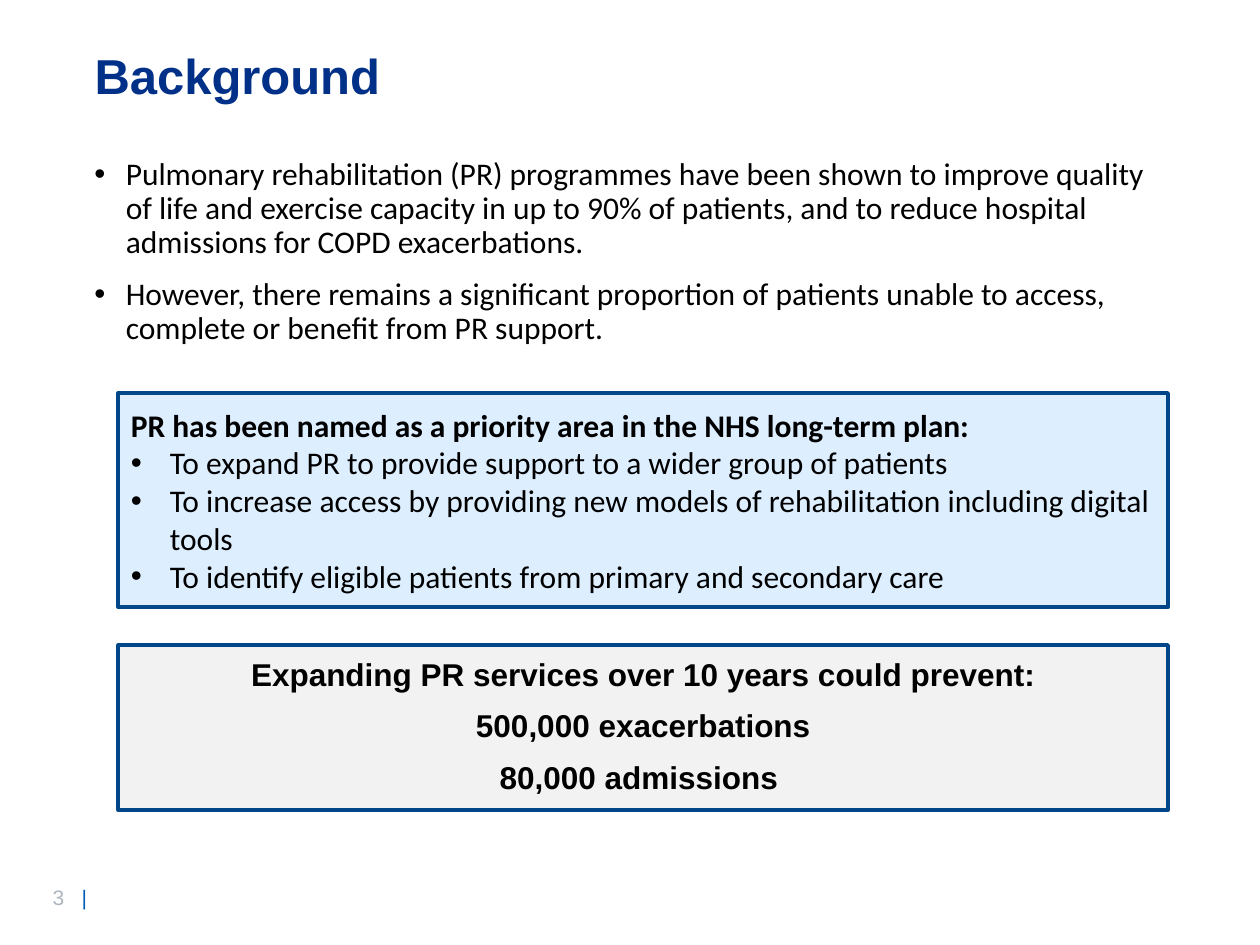
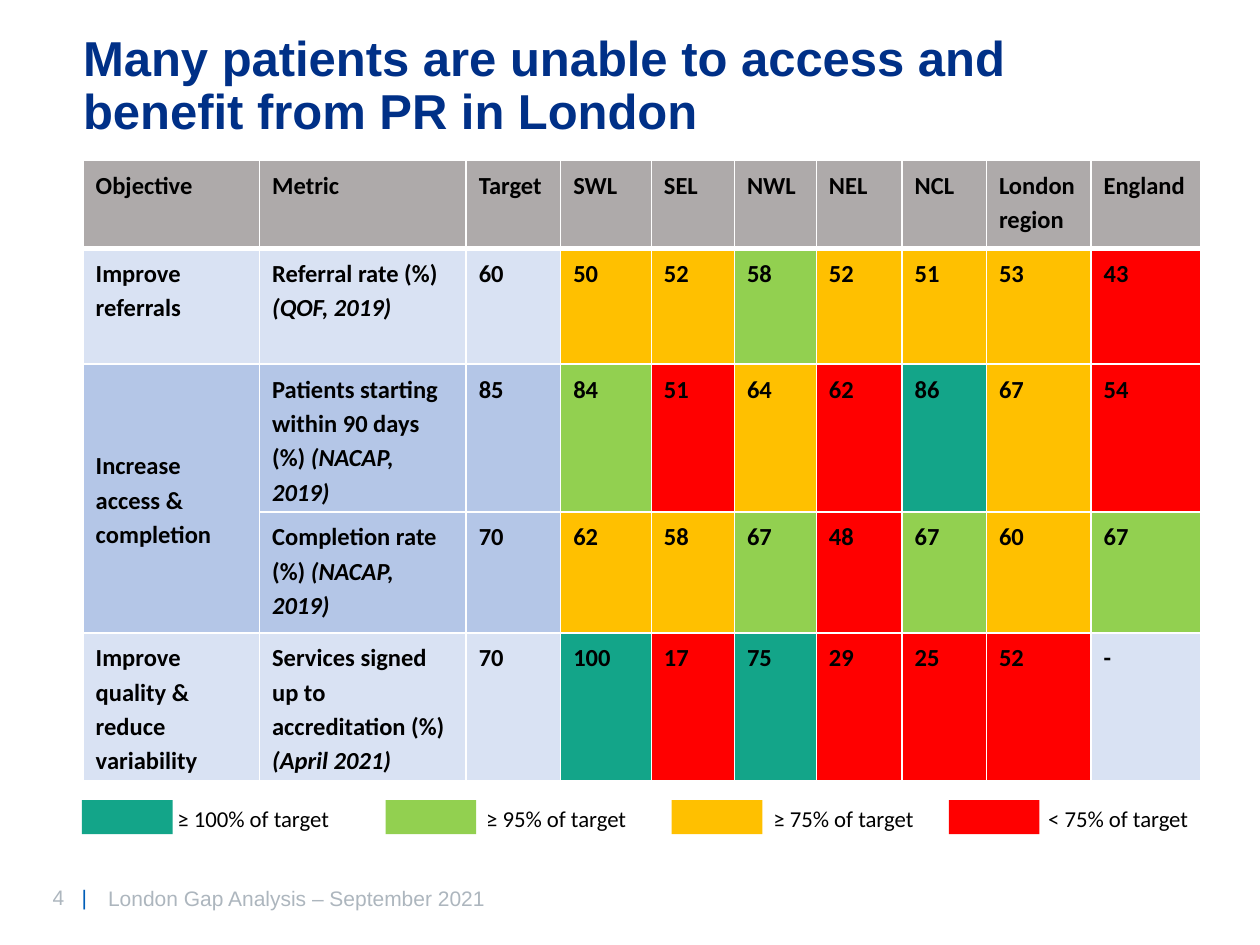
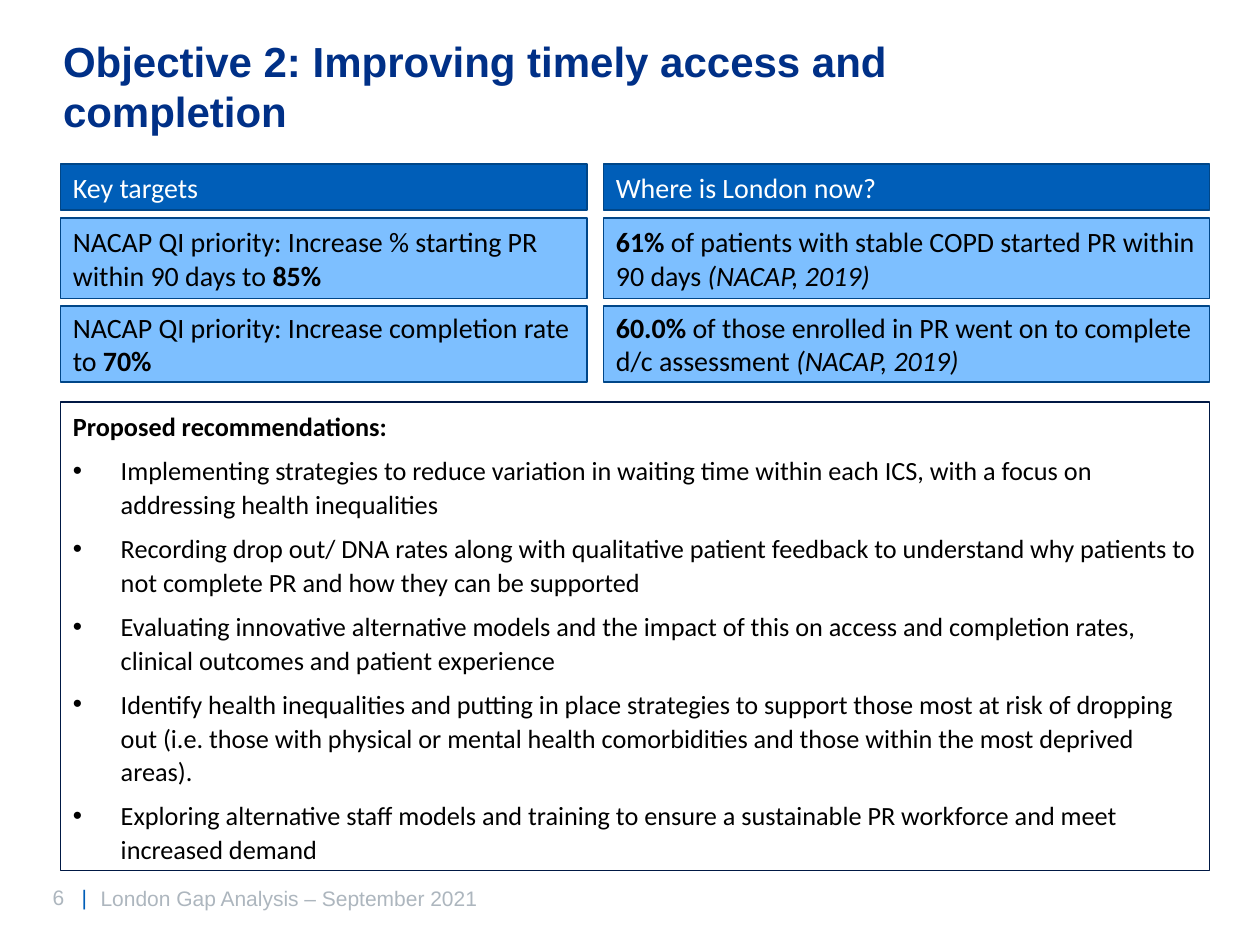
from dataclasses import dataclass

from lxml import etree
from pptx import Presentation
from pptx.dml.color import RGBColor
from pptx.enum.shapes import MSO_SHAPE
from pptx.enum.text import MSO_ANCHOR, MSO_AUTO_SIZE, PP_ALIGN
from pptx.oxml.ns import qn
from pptx.util import Inches, Pt

RECTANGLE = MSO_SHAPE.RECTANGLE
TOP, MIDDLE = MSO_ANCHOR.TOP, MSO_ANCHOR.MIDDLE
LEFT, CENTER = PP_ALIGN.LEFT, PP_ALIGN.CENTER
NO_AUTOFIT = MSO_AUTO_SIZE.NONE


@dataclass(frozen=True)
class Theme:
    heading_font: str = "Arial"
    body_font: str = "Calibri"
    navy: str = "003087"
    blue: str = "005EB8"
    edge: str = "004688"
    dark_edge: str = "001844"
    sky: str = "7DBFFF"
    pale_blue: str = "DDEEFF"
    pale_grey: str = "F2F2F2"
    footer_grey: str = "ADB6BE"
    header_grey: str = "AEAAAA"
    band_light: str = "D9E2F3"
    band_dark: str = "B4C6E7"
    teal: str = "13A589"
    green: str = "92D050"
    amber: str = "FFC000"
    red: str = "FF0000"
    black: str = "000000"
    white: str = "FFFFFF"
    title: float = 28
    long_title: float = 24
    body: float = 18
    card: float = 16
    recommendation: float = 15
    table: float = 14
    legend: float = 13
    footer: float = 12


THEME = Theme()


def write(frame, paragraphs, size, font=THEME.body_font, colour=THEME.black,
          align=LEFT, spacing=1.0, before=0, indent=0, anchor=TOP):
    """Each paragraph is a list of (text, style); style holds b, i or a bullet."""
    frame.word_wrap = True
    frame.vertical_anchor = anchor
    for index, runs in enumerate(paragraphs):
        paragraph = frame.add_paragraph() if index else frame.paragraphs[0]
        paragraph.alignment = align
        paragraph.line_spacing = spacing
        if index:
            paragraph.space_before = Pt(before)
        if "•" in runs[0][1]:
            properties = paragraph._p.get_or_add_pPr()
            properties.set("marL", str(Inches(indent)))
            properties.set("indent", str(-Inches(indent)))
            etree.SubElement(properties, qn("a:buFont"), typeface="Arial")
            etree.SubElement(properties, qn("a:buChar"), char="•")
        for text, style in runs:
            run = paragraph.add_run()
            run.text = text
            run.font.name = font
            run.font.size = Pt(size)
            run.font.bold = "b" in style
            run.font.italic = "i" in style
            run.font.color.rgb = RGBColor.from_string(colour)


def add_box(slide, place, fill, edge=None, edge_width=1.0):
    box = slide.shapes.add_shape(RECTANGLE, *map(Inches, place))
    box.shadow.inherit = False
    box.fill.solid()
    box.fill.fore_color.rgb = RGBColor.from_string(fill)
    if edge:
        box.line.color.rgb = RGBColor.from_string(edge)
        box.line.width = Pt(edge_width)
    else:
        box.line.fill.background()
    return box


deck = Presentation()
deck.slide_width, deck.slide_height = Inches(10), Inches(7.5)
title_only = deck.slide_layouts[5]

# Titles, page numbers and footers
FOOTER = "London Gap Analysis – September 2021"
OPENINGS = [
    (3, "Background", (0.65, 0.36, 7.75, 0.67), THEME.title, 0.9, None),
    (4, "Many patients are unable to access and benefit from PR in London",
     (0.56, 0.22, 7.6, 0.95), THEME.title, 0.9, 0.76),
    (6, "Objective 2: Improving timely access and completion",
     (0.4, 0.23, 8.09, 0.91), THEME.long_title, 1.0, 0.7),
]
slides = []
for number, heading, place, size, spacing, footer_left in OPENINGS:
    slide = deck.slides.add_slide(title_only)
    slides.append(slide)
    title = slide.shapes.title
    title.left, title.top, title.width, title.height = map(Inches, place)
    title.text_frame.auto_size = NO_AUTOFIT
    write(title.text_frame, [[(heading, "b")]], size, THEME.heading_font,
          THEME.navy, spacing=spacing)

    page = slide.shapes.add_textbox(*map(Inches, (0.32, 6.97, 0.71, 0.3)))
    write(page.text_frame, [[(str(number), ""), ("\t|", "")]], THEME.footer,
          THEME.heading_font, THEME.footer_grey)
    page_line = page.text_frame.paragraphs[0]
    page_line.runs[1].font.color.rgb = RGBColor.from_string(THEME.blue)
    tabs = etree.SubElement(page_line._p.get_or_add_pPr(), qn("a:tabLst"))
    etree.SubElement(tabs, qn("a:tab"), pos=str(Inches(0.23)), algn="l")

    if footer_left:
        footer = slide.shapes.add_textbox(
            *map(Inches, (footer_left, 6.93, 6.26, 0.4)))
        write(footer.text_frame, [[(FOOTER, "")]], THEME.footer,
              THEME.heading_font, THEME.footer_grey, anchor=MIDDLE)

background, gaps, objective = slides

# Background: evidence, priorities and potential benefit
evidence = add_box(background, (0.65, 1.21, 8.76, 1.7), THEME.white)
write(evidence.text_frame, [
    [("Pulmonary rehabilitation (PR) programmes have been shown to improve quality of life and "
      "exercise capacity in up to 90% of patients, and to reduce hospital admissions for COPD "
      "exacerbations.", "•")],
    [("However, there remains a significant proportion of patients unable to access, complete "
      "or benefit from PR support.", "•")],
], THEME.body, spacing=0.9, before=10, indent=0.25)

priorities = add_box(background, (0.94, 3.12, 8.33, 1.7), THEME.pale_blue, THEME.edge, 2.25)
write(priorities.text_frame, [
    [("PR has been named as a priority area in the NHS long-term plan:", "b")],
    [("To expand PR to provide support to a wider group of patients", "•")],
    [("To increase access by providing new models of rehabilitation including digital tools",
      "•")],
    [("To identify eligible patients from primary and secondary care", "•")],
], THEME.body, indent=0.31, anchor=MIDDLE)

benefit = add_box(background, (0.94, 5.12, 8.33, 1.31), THEME.pale_grey, THEME.edge, 2.25)
write(benefit.text_frame, [
    [("Expanding PR services over 10 years could prevent:", "b")],
    [("500,000 exacerbations", "b")],
    [("80,000 admissions ", "b")],
], THEME.body, THEME.heading_font, align=CENTER, spacing=0.9, before=10, anchor=MIDDLE)

# Gap table: scores are coloured by their share of the target
HEADERS = ["Objective", "Metric", "Target", "SWL", "SEL", "NWL", "NEL", "NCL",
           "London region", "England"]
METRICS = [
    ("Improve referrals", "Referral rate (%) ", "(QOF, 2019)",
     60, [50, 52, 58, 52, 51, 53, 43], THEME.band_light),
    ("Increase access & completion", "Patients starting within 90 days (%) ", "(NACAP, 2019)",
     85, [84, 51, 64, 62, 86, 67, 54], THEME.band_dark),
    ("", "Completion rate (%) ", "(NACAP, 2019)",
     70, [62, 58, 67, 48, 67, 60, 67], THEME.band_dark),
    ("Improve quality & reduce variability", "Services signed up to accreditation (%) ",
     "(April 2021)", 70, [100, 17, 75, 29, 25, 52, "-"], THEME.band_light),
]
COLUMN_WIDTHS = [1.4, 1.64, 0.75, 0.72, 0.66, 0.65, 0.68, 0.67, 0.83, 0.87]
ROW_HEIGHTS = [0.7, 0.92, 1.17, 0.96, 1.17]
RATINGS = [(1.0, THEME.teal, "≥ 100% of target"), (0.95, THEME.green, "≥ 95% of target"),
           (0.75, THEME.amber, "≥ 75% of target"), (0, THEME.red, "< 75% of target")]

rows = [[([(header, "b")], THEME.header_grey) for header in HEADERS]]
for aim, metric, source, target, scores, band in METRICS:
    row = [([(aim, "b")] if aim else None, band),
           ([(metric, "b"), (source, "bi")], band),
           ([(str(target), "b")], band)]
    for score in scores:
        shade = band if score == "-" else next(
            colour for share, colour, label in RATINGS if score / target >= share)
        row.append(([(str(score), "b")], shade))
    rows.append(row)

table = gaps.shapes.add_table(
    len(rows), len(HEADERS), Inches(0.66), Inches(1.27),
    Inches(sum(COLUMN_WIDTHS)), Inches(sum(ROW_HEIGHTS))).table
for column, width in zip(table.columns, COLUMN_WIDTHS):
    column.width = Inches(width)
for table_row, height in zip(table.rows, ROW_HEIGHTS):
    table_row.height = Inches(height)
table.cell(2, 0).merge(table.cell(3, 0))

for r, row in enumerate(rows):
    for c, (runs, shade) in enumerate(row):
        cell = table.cell(r, c)
        cell.fill.solid()
        cell.fill.fore_color.rgb = RGBColor.from_string(shade)
        if runs:
            write(cell.text_frame, [runs], THEME.table, spacing=1.15)
        properties = cell._tc.get_or_add_tcPr()
        for position, side in enumerate(["lnL", "lnR", "lnT", "lnB"]):
            heavy = (r, side) in [(0, "lnB"), (1, "lnT")]
            border = etree.Element(qn(f"a:{side}"), w=str(Pt(3 if heavy else 1)))
            paint = etree.SubElement(border, qn("a:solidFill"))
            etree.SubElement(paint, qn("a:srgbClr"), val=THEME.white)
            properties.insert(position, border)
table.cell(2, 0).vertical_anchor = MIDDLE

# Legend
LEGEND_LEFTS = [(0.65, 1.31), (3.06, 3.76), (5.33, 6.04), (7.53, 8.22)]
for (swatch_left, label_left), (share, colour, label) in zip(LEGEND_LEFTS, RATINGS):
    add_box(gaps, (swatch_left, 6.35, 0.72, 0.27), colour)
    caption = gaps.shapes.add_textbox(*map(Inches, (label_left, 6.34, 1.51, 0.32)))
    write(caption.text_frame, [[(label, "")]], THEME.legend)

# Objective 2: targets beside the current position
CARD_COLUMNS = [
    (0.48, 4.18, [
        [("Key targets", "")],
        [("NACAP QI priority: Increase % starting PR within 90 days to ", ""), ("85%", "b")],
        [("NACAP QI priority: Increase completion rate to ", ""), ("70%", "b")],
    ]),
    (4.79, 4.81, [
        [("Where is London now?", "")],
        [("61% ", "b"), ("of patients with stable COPD started PR within 90 days ", ""),
         ("(NACAP, 2019)", "i")],
        [("60.0% ", "b"), ("of those enrolled in PR went on to complete d/c assessment ", ""),
         ("(NACAP, 2019)", "i")],
    ]),
]
CARD_ROWS = [(1.3, 0.37, THEME.blue, THEME.white), (1.73, 0.64, THEME.sky, THEME.black),
             (2.43, 0.6, THEME.sky, THEME.black)]
for left, width, cards in CARD_COLUMNS:
    for runs, (top, height, fill, ink) in zip(cards, CARD_ROWS):
        card = add_box(objective, (left, top, width, height), fill, THEME.edge)
        write(card.text_frame, [runs], THEME.card, colour=ink, anchor=MIDDLE)

# Recommendations
RECOMMENDATIONS = [
    "Implementing strategies to reduce variation in waiting time within each ICS, with a focus "
    "on addressing health inequalities",
    "Recording drop out/ DNA rates along with qualitative patient feedback to understand why "
    "patients to not complete PR and how they can be supported",
    "Evaluating innovative alternative models and the impact of this on access and completion "
    "rates, clinical outcomes and patient experience",
    "Identify health inequalities and putting in place strategies to support those most at risk "
    "of dropping out (i.e. those with physical or mental health comorbidities and those within "
    "the most deprived areas).",
    "Exploring alternative staff models and training to ensure a sustainable PR workforce and "
    "meet increased demand",
]
proposals = add_box(objective, (0.48, 3.19, 9.12, 3.72), THEME.white, THEME.dark_edge, 0.75)
write(proposals.text_frame,
      [[("Proposed recommendations:", "b")]] + [[(text, "•")] for text in RECOMMENDATIONS],
      THEME.recommendation, spacing=1.07, before=6, indent=0.38)

deck.save("out.pptx")
